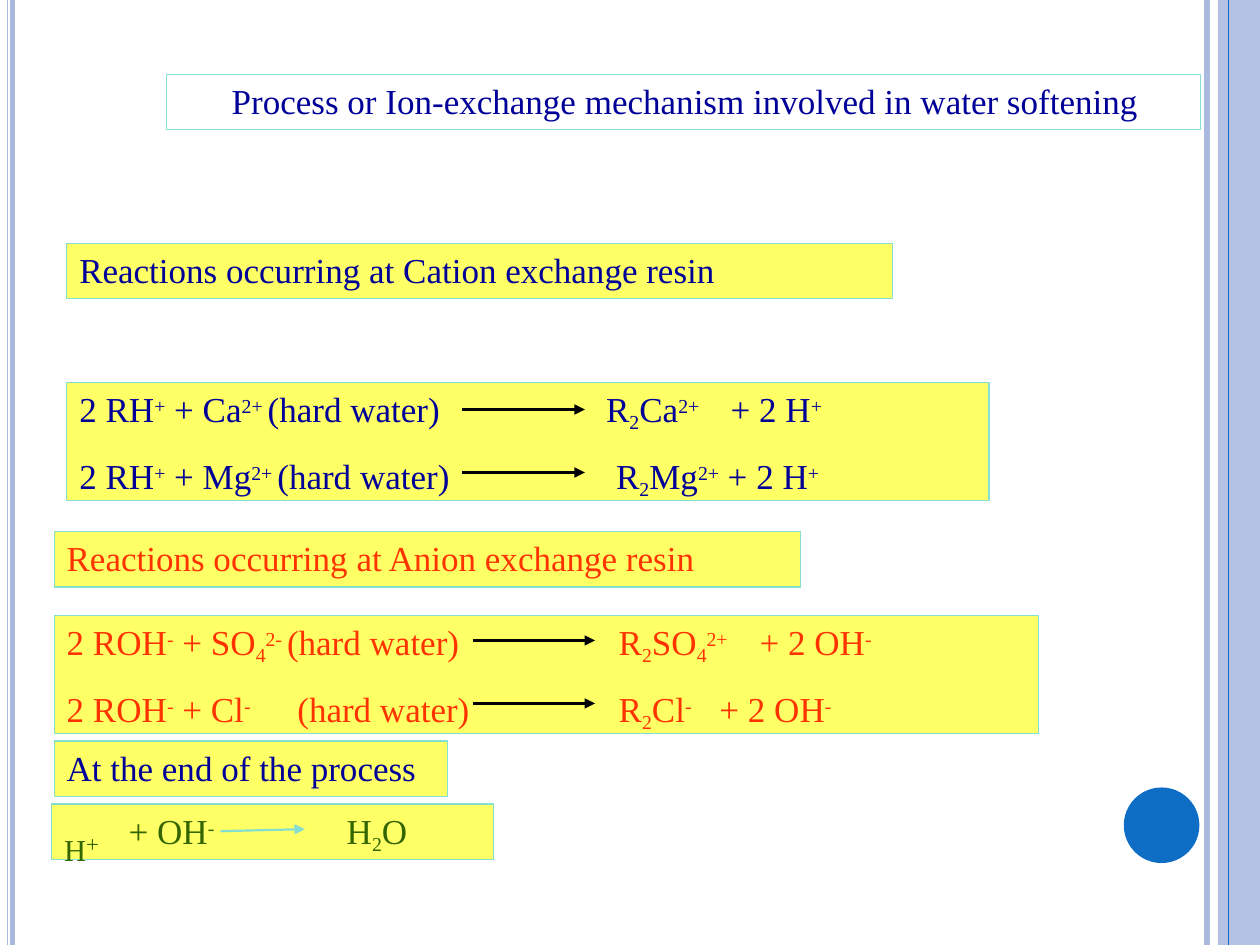
"""Build a slide on the ion-exchange reactions that soften water."""
from lxml import etree
from pptx import Presentation
from pptx.dml.color import RGBColor
from pptx.enum.shapes import MSO_CONNECTOR, MSO_SHAPE
from pptx.enum.text import MSO_ANCHOR, MSO_AUTO_SIZE, PP_ALIGN
from pptx.oxml.ns import qn
from pptx.util import Pt

STRAIGHT = MSO_CONNECTOR.STRAIGHT
RECTANGLE, OVAL = MSO_SHAPE.RECTANGLE, MSO_SHAPE.OVAL
NAVY, RED, GREEN, BLACK = "000099", "FF3300", "336600", "000000"
YELLOW, TEAL, LAVENDER, BLUE = "FFFF66", "85DFD0", "AABADF", "0E6EC5"
FRAME = {
    "word_wrap": True, "auto_size": MSO_AUTO_SIZE.NONE,
    "vertical_anchor": MSO_ANCHOR.TOP, "margin_top": Pt(3),
    "margin_right": 0, "margin_bottom": 0,
}
LEVELS = {"^": (19.5, 26), "_": (19.5, -21), "↓": (30, -17), "°": (13, 0)}


def write(shape, lines, color, indent):
    """Fill a shape; | parts spans and a leading mark sets their level."""
    frame = shape.text_frame
    for name, value in {**FRAME, "margin_left": Pt(indent)}.items():
        setattr(frame, name, value)
    for index, (markup, stops) in enumerate(lines):
        para = frame.add_paragraph() if index else frame.paragraphs[0]
        para.alignment = PP_ALIGN.LEFT
        para.space_before = Pt(12 if index else 0)
        if stops:
            tabs = etree.SubElement(para._p.get_or_add_pPr(), qn("a:tabLst"))
            for stop in stops:
                etree.SubElement(tabs, qn("a:tab"), pos=str(Pt(stop)), algn="l")
        for part in markup.split("|"):
            size, baseline = LEVELS.get(part[0], (20, 0))
            span = para.add_run()
            span.text = part[1:] if part[0] in LEVELS else part
            span.font.name = "Times New Roman"
            span.font.size = Pt(size)
            span.font.bold = False
            span.font.color.rgb = RGBColor.from_string(color)
            if baseline:
                span._r.get_or_add_rPr().set("baseline", str(baseline * 1000))


def draw_line(ends, color, width, arrow=False):
    """Draw a straight line without shadow, with an arrowhead if asked."""
    line = page.shapes.add_connector(STRAIGHT, *map(Pt, ends))
    line.line.color.rgb = RGBColor.from_string(color)
    line.line.width = Pt(width)
    if arrow:
        etree.SubElement(line.line._get_or_add_ln(), qn("a:tailEnd"), type="triangle")
    etree.SubElement(line._element.spPr, qn("a:effectLst"))


deck = Presentation()
deck.slide_width, deck.slide_height = Pt(720), Pt(540)
page = deck.slides.add_slide(deck.slide_layouts[5])

for x, width in [(689.8, 3), (7.2, 2.75), (4.3, 0.91)]:
    draw_line((x, 0, x, 540), LAVENDER, width)

for kind, place, color in [
    (RECTANGLE, (696, 0, 24, 540), LAVENDER),
    (OVAL, (642.2, 450, 43.2, 43.2), BLUE),
]:
    ornament = page.shapes.add_shape(kind, *map(Pt, place))
    ornament.shadow.inherit = False
    ornament.fill.solid()
    ornament.fill.fore_color.rgb = RGBColor.from_string(color)
    ornament.line.fill.background()
    if kind == RECTANGLE:
        tint = ornament._element.spPr.find(".//" + qn("a:srgbClr"))
        etree.SubElement(tint, qn("a:alpha"), val="87000")
draw_line((702, 0, 702, 540), BLUE, 0.72)

title = page.shapes.title
title.left, title.top, title.width, title.height = map(Pt, (95, 42.5, 591, 31.7))
title.line.color.rgb = RGBColor.from_string(TEAL)
title.line.width = Pt(0.72)
heading = "Process or Ion-exchange mechanism involved in water softening"
write(title, [(heading, ())], NAVY, 37.4)

cation = [
    ("2 RH|^+| + Ca|^2+ |(hard water)\tR|_2|Ca|^2+\t|+ 2 H|^+", (301, 372.2)),
    ("2 RH|^+| + Mg|^2+ |(hard water)\tR|_2|Mg|^2+| + 2 H|^+", (306.7,)),
]
anion = [
    ("2 ROH|^-| + SO|_4|^2- |(hard water)\tR|_2|SO|_4|^2+\t|+ 2 OH|^-", (315.4, 396)),
    ("2 ROH|^-| + Cl|^-\t|(hard water)\tR|_2|Cl|^-\t|+ 2 OH|^-", (131.8, 315.4, 373)),
]
for place, lines, color, indent in [
    ((38.2, 139, 471.6, 31.7), [("Reactions occurring at Cation exchange resin", ())], NAVY, 7.2),
    ((38.2, 218.4, 527, 67.7), cation, NAVY, 7.2),
    ((31, 303.8, 426.6, 31.7), [("Reactions occurring at Anion exchange resin", ())], RED, 7.2),
    ((31, 351.7, 562.3, 67.7), anion, RED, 7.2),
    ((31, 423.4, 224.6, 31.7), [("At the end of the process", ())], NAVY, 7.2),
    ((29.5, 459.4, 252.7, 31.7), [("+ OH|^-\t|H|_2|O", (124.6,))], GREEN, 44),
]:
    box = page.shapes.add_shape(RECTANGLE, *map(Pt, place))
    box.shadow.inherit = False
    box.fill.solid()
    box.fill.fore_color.rgb = RGBColor.from_string(YELLOW)
    box.line.color.rgb = RGBColor.from_string(TEAL)
    box.line.width = Pt(0.72)
    write(box, lines, color, indent)

hydrogen = page.shapes.add_textbox(Pt(36.7), Pt(454), Pt(26), Pt(38))
write(hydrogen, [("↓H|°+", ())], GREEN, 0)

for x, y in [(264.2, 234), (264.2, 270), (270, 366), (270, 402)]:
    draw_line((x, y, x + 70, y), BLACK, 1.25, arrow=True)
draw_line((126, 475, 174.2, 473.8), TEAL, 1.25, arrow=True)

deck.save("out.pptx")
